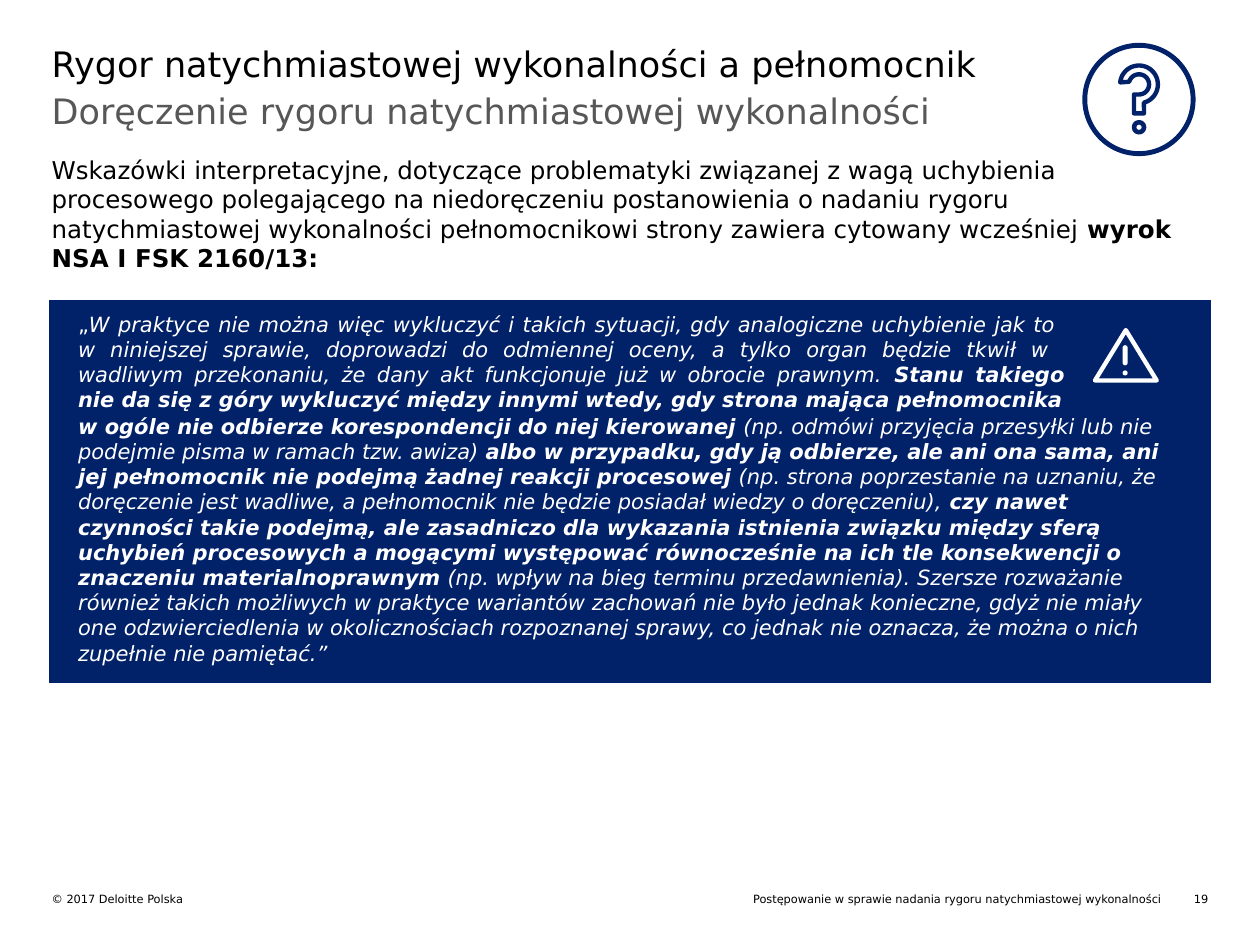
from math import cos, radians, sin

from lxml.etree import SubElement
from pptx import Presentation
from pptx.dml.color import RGBColor
from pptx.enum.shapes import MSO_SHAPE as Shape
from pptx.enum.text import MSO_ANCHOR as Anchor, PP_ALIGN as Align
from pptx.oxml.ns import qn
from pptx.util import Inches, Pt

COLORS = {"navy": "012169", "white": "FFFFFF", "black": "000000", "gray": "575757"}
FONT = "DejaVu Sans"
MARGIN, CONTENT_WIDTH = 0.41, 9.18

INTRO = [
    ("Wskazówki interpretacyjne, dotyczące problematyki związanej z wagą uchybienia "
     "procesowego polegającego na niedoręczeniu postanowienia o nadaniu rygoru "
     "natychmiastowej wykonalności pełnomocnikowi strony zawiera cytowany wcześniej ", ""),
    ("wyrok NSA I FSK 2160/13:", "b"),
]
QUOTE_START = [
    ("„", ""),
    ("W praktyce nie można więc wykluczyć i takich sytuacji, gdy analogiczne uchybienie jak to \n"
     "w niniejszej sprawie, doprowadzi do odmiennej oceny, a tylko organ będzie tkwił w \n"
     "wadliwym przekonaniu, że dany akt funkcjonuje już w obrocie prawnym. ", "i"),
    ("Stanu takiego\n"
     "nie da się z góry wykluczyć między innymi wtedy, gdy strona mająca pełnomocnika", "bi"),
]
QUOTE_REST = [
    ("w ogóle nie odbierze korespondencji do niej kierowanej", "bi"),
    (" (np. odmówi przyjęcia przesyłki lub nie podejmie pisma w ramach tzw. awiza) ", "i"),
    ("albo w przypadku, gdy ją odbierze, ale ani ona sama, ani jej pełnomocnik nie podejmą "
     "żadnej reakcji procesowej", "bi"),
    (" (np. strona poprzestanie na uznaniu, że doręczenie jest wadliwe, a pełnomocnik nie "
     "będzie posiadał wiedzy o doręczeniu), ", "i"),
    ("czy nawet czynności takie podejmą, ale zasadniczo dla wykazania istnienia związku między "
     "sferą uchybień procesowych a mogącymi występować równocześnie na ich tle konsekwencji o "
     "znaczeniu materialnoprawnym", "bi"),
    (" (np. wpływ na bieg terminu przedawnienia). Szersze rozważanie również takich możliwych "
     "w praktyce wariantów zachowań nie było jednak konieczne, gdyż nie miały one "
     "odzwierciedlenia w okolicznościach rozpoznanej sprawy, co jednak nie oznacza, że można "
     "o nich zupełnie nie pamiętać.”", "i"),
]


def rgb(name):
    """Return the palette colour of that name."""
    return RGBColor.from_string(COLORS[name])


def add_text(slide, runs, left, top, width, height, *, size, color="black",
             align=Align.LEFT, holder=None):
    """Write runs of (text, style) into a placeholder or a new text box."""
    box = holder or slide.shapes.add_textbox(0, 0, 0, 0)
    box.left, box.top = Inches(left), Inches(top)
    box.width, box.height = Inches(width), Inches(height)
    frame = box.text_frame
    frame.word_wrap = True
    frame.vertical_anchor = Anchor.TOP
    frame.margin_left = frame.margin_right = frame.margin_top = frame.margin_bottom = 0
    paragraph = frame.paragraphs[0]
    paragraph.alignment = align
    paragraph.space_before = Pt(0)
    for text, style in [(runs, "")] if isinstance(runs, str) else runs:
        for index, line in enumerate(text.split("\n")):
            if index:
                paragraph.add_line_break()
            run = paragraph.add_run()
            run.text = line
            run.font.name, run.font.size = FONT, Pt(size)
            run.font.bold, run.font.italic = "b" in style, "i" in style
            run.font.color.rgb = rgb(color)


def paint(shape, fill=None, line=None, weight=1, miter=False):
    """Set the fill and outline of a shape and drop its shadow."""
    shape.shadow.inherit = False
    if fill:
        shape.fill.solid()
        shape.fill.fore_color.rgb = rgb(fill)
    else:
        shape.fill.background()
    if line:
        shape.line.color.rgb = rgb(line)
        shape.line.width = Pt(weight)
    else:
        shape.line.fill.background()
    if miter:
        outline = shape.element.spPr.find(qn("a:ln"))
        SubElement(outline, qn("a:miter"), lim="800000")


def add_shape(slide, kind, left, top, width, height, **style):
    """Add a painted preset shape."""
    shape = slide.shapes.add_shape(kind, Inches(left), Inches(top), Inches(width), Inches(height))
    paint(shape, **style)
    return shape


def arc(center_x, center_y, radius, start, stop, steps=40):
    """Return points along a circular arc, with angles in degrees."""
    angles = [radians(start + (stop - start) * i / steps) for i in range(steps + 1)]
    return [(center_x + radius * cos(a), center_y + radius * sin(a)) for a in angles]


def add_question_icon(slide):
    """Draw the outlined question mark in a ring."""
    center, hook_y = 9.04, 0.67
    add_shape(slide, Shape.OVAL, 8.61, 0.36, 0.86, 0.86, line="navy", weight=2.8)
    add_shape(slide, Shape.OVAL, 9.0, 0.97, 0.08, 0.08, line="navy", weight=2.6)
    hook = arc(center, hook_y, 0.15, 186, 435)
    hook += [(9.08, 0.9), (9.0, 0.9), (9.0, 0.75)]
    hook += arc(center, hook_y, 0.08, 90, -165)
    points = [(Inches(x), Inches(y)) for x, y in hook]
    builder = slide.shapes.build_freeform(*points[0])
    builder.add_line_segments(points[1:], close=True)
    paint(builder.convert_to_shape(), line="navy", weight=2.5)


def add_warning_icon(slide):
    """Draw the warning triangle with its exclamation mark."""
    add_shape(slide, Shape.ISOSCELES_TRIANGLE, 8.69, 2.62, 0.49, 0.4, line="white", weight=2.5)
    bar = add_shape(slide, Shape.ROUNDED_RECTANGLE, 8.91, 2.74, 0.04, 0.16, fill="white")
    bar.adjustments[0] = 0.5
    add_shape(slide, Shape.OVAL, 8.91, 2.94, 0.04, 0.04, fill="white")


def add_footer(slide):
    """Add the copyright line, the presentation name and the page number."""
    for text, left, width, align in [
        ("© 2017\u00a0Deloitte Polska", MARGIN, 4.39, Align.LEFT),
        ("Postępowanie w sprawie nadania rygoru natychmiastowej wykonalności",
         5.2, 4.02, Align.RIGHT),
        ("19", 9.34, 0.25, Align.RIGHT),
    ]:
        add_text(slide, text, left, 7.08, width, 0.22, size=6.5, align=align)


def main():
    """Build the slide and save it."""
    deck = Presentation()
    deck.slide_width, deck.slide_height = Inches(10), Inches(7.5)
    slide = deck.slides.add_slide(deck.slide_layouts[5])
    add_text(slide, "Rygor natychmiastowej wykonalności a pełnomocnik",
             MARGIN, 0.34, CONTENT_WIDTH, 0.37, size=20, holder=slide.shapes.title)
    add_text(slide, "Doręczenie rygoru natychmiastowej wykonalności",
             MARGIN, 0.71, CONTENT_WIDTH, 0.4, size=20, color="gray")
    add_text(slide, INTRO, MARGIN, 1.23, CONTENT_WIDTH, 1.17, size=14)
    add_shape(slide, Shape.RECTANGLE, MARGIN, 2.4, CONTENT_WIDTH, 3,
              fill="navy", line="navy", weight=3, miter=True)
    quote = {"size": 12, "color": "white"}
    add_text(slide, QUOTE_START, 0.62, 2.47, 7.83, 0.81, align=Align.JUSTIFY, **quote)
    add_text(slide, QUOTE_REST, 0.62, 3.28, 8.79, 2.02, **quote)
    add_question_icon(slide)
    add_warning_icon(slide)
    add_footer(slide)
    deck.save("out.pptx")


if __name__ == "__main__":
    main()
